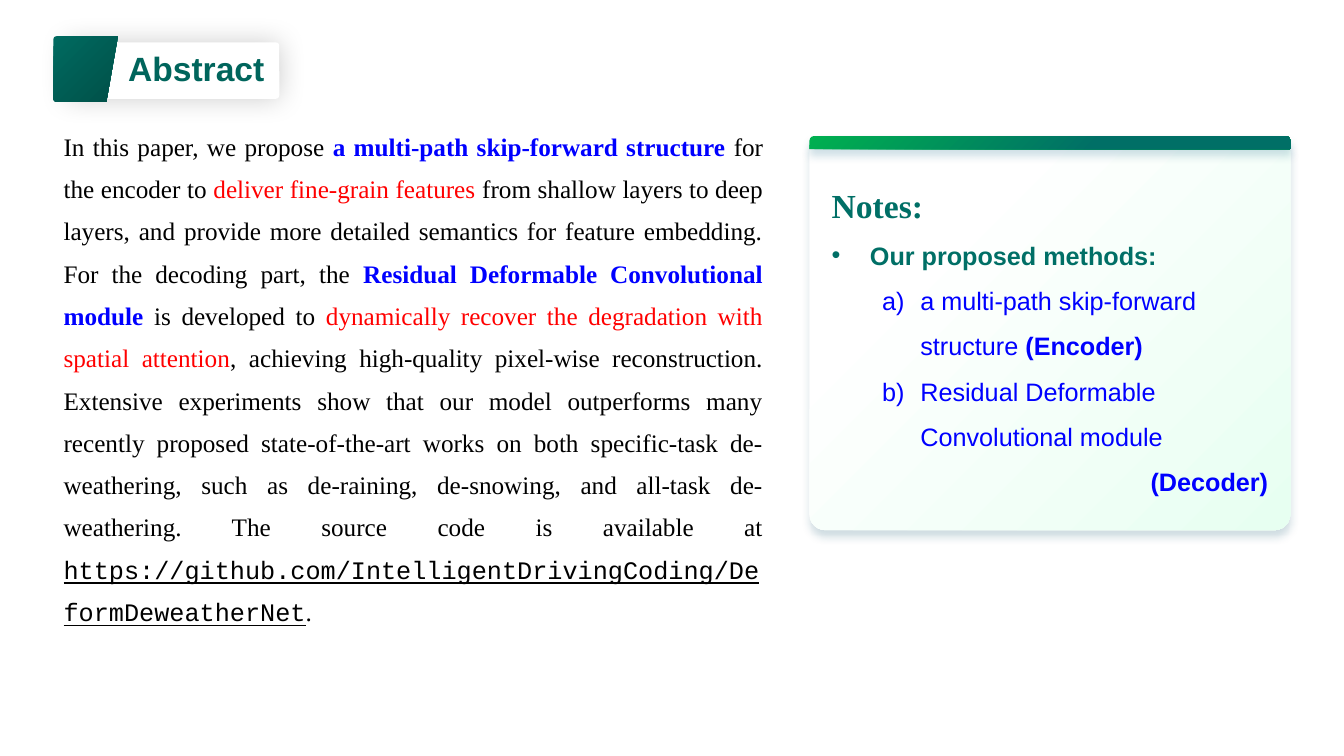
from dataclasses import dataclass, field
from math import cos, pi, sin
from typing import Any

from lxml.etree import SubElement
from pptx import Presentation
from pptx.dml.color import RGBColor as Rgb
from pptx.enum.shapes import MSO_SHAPE as Preset
from pptx.enum.text import MSO_ANCHOR as Anchor, MSO_AUTO_SIZE as AutoSize, PP_ALIGN as Align
from pptx.oxml.ns import qn
from pptx.util import Inches, Pt

WIDTH, HEIGHT = Inches(13.333), Inches(7.5)


@dataclass(frozen=True)
class Theme:
    black: str = "000000"
    white: str = "FFFFFF"
    blue: str = "0000FF"
    red: str = "FF0000"
    title: str = "00655C"
    teal: str = "006F66"
    sans: str = "Arial"
    serif: str = "Times New Roman"
    mono: str = "Courier New"
    heading: int = 24
    body: int = 18


THEME = Theme()


@dataclass(frozen=True)
class Area:
    """Left, top, width and height as percentages of the slide."""
    left: float
    top: float
    width: float
    height: float

    def box(self) -> tuple[int, ...]:
        return tuple(int(share * side / 100) for share, side in (
            (self.left, WIDTH), (self.top, HEIGHT), (self.width, WIDTH), (self.height, HEIGHT)))


@dataclass(frozen=True)
class Shadow:
    color: str
    blur: float
    distance: float = 0
    angle: int = 0
    opacity: int = 20


@dataclass(frozen=True)
class Card:
    area: Area
    preset: Preset
    corners: tuple[float, ...]
    stops: tuple[tuple[float, str], ...]
    shadow: Shadow


@dataclass(frozen=True)
class Span:
    text: str
    color: str = THEME.black
    bold: bool = False
    font: str = THEME.serif
    size: int = THEME.body
    underline: bool = False


@dataclass(frozen=True)
class Para:
    spans: list[Span]
    spacing: float = 1.0
    align: Align = Align.LEFT
    level: int = 0
    margin: float = 0
    hanging: float = 0
    bullet: tuple[str, dict[str, str]] = field(default=("a:buNone", {}))


# Content
LETTER = ("a:buAutoNum", {"type": "alphaLcParenR"})
DOT = ("a:buChar", {"char": "•"})


def note(text: str, bold: bool = False, color: str = THEME.blue) -> Span:
    return Span(text, color, bold, THEME.sans)


TITLE = [Para([Span("Abstract", THEME.title, True, THEME.sans, THEME.heading)])]
ABSTRACT = [Para([
    Span("In this paper, we propose "),
    Span("a multi-path skip-forward structure ", THEME.blue, True),
    Span("for the encoder to "),
    Span("deliver fine-grain features ", THEME.red),
    Span("from shallow layers to deep layers, and provide more detailed semantics for "
         "feature embedding. For the decoding part, the "),
    Span("Residual Deformable Convolutional module ", THEME.blue, True),
    Span("is developed to "),
    Span("dynamically recover the degradation with spatial attention", THEME.red),
    Span(", achieving high-quality pixel-wise reconstruction. Extensive experiments show that "
         "our model outperforms many recently proposed state-of-the-art works on both "
         "specific-task de-weathering, such as de-raining, de-snowing, and all-task "
         "de-weathering. The source code is available at "),
    Span("https://github.com/IntelligentDrivingCoding/DeformDeweatherNet",
         font=THEME.mono, underline=True),
    Span("."),
], 1.4, Align.JUSTIFY)]
NOTES = [
    Para([Span("Notes:", THEME.teal, True, size=THEME.heading)], 1.5, Align.JUSTIFY),
    Para([note("Our proposed methods:", True, THEME.teal)], 1.5, Align.JUSTIFY,
         0, 0.38, -0.38, DOT),
    Para([note("a multi-path skip-forward structure "), note("(Encoder)", True)], 1.5,
         Align.LEFT, 1, 0.88, -0.38, LETTER),
    Para([note("Residual Deformable Convolutional module")], 1.5,
         Align.LEFT, 1, 0.88, -0.38, LETTER),
    Para([note("(Decoder)", True)], 1.5, Align.RIGHT, 1, 0.5),
]
TEXTS = [
    (0, Area(8.78, 5.73, 12, 6.67), TITLE),
    (1, Area(3.98, 15.07, 53.55, 68.67), ABSTRACT),
    (2, Area(61.13, 21.07, 33.98, 45.07), NOTES),
]
TITLE_CARD = Card(Area(4.95, 5.6, 15.83, 7.47), Preset.ROUNDED_RECTANGLE, (0.06,),
                  ((0, THEME.white),), Shadow(THEME.black, 20))
NOTE_CARDS = [
    Card(Area(60.23, 18, 35.78, 52.13), Preset.ROUNDED_RECTANGLE, (0.04,),
         ((0.25, THEME.white), (1, "E7FFF1")), Shadow("0F526C", 6, 4, 90)),
    Card(Area(60.23, 18, 35.78, 1.73), Preset.ROUND_2_SAME_RECTANGLE, (0.35, 0),
         ((0, "00B050"), (0.6, THEME.teal)), Shadow("116584", 6, 4, 90)),
]
MARK_AREA = Area(3.98, 4.8, 4.8, 8.67)
MARK_STOPS = ((0, "006A60"), (1, "005048"))


def set_values(target: Any, values: dict[str, Any]) -> None:
    for name, value in values.items():
        setattr(target, name, value)


def paint(shape: Any, stops: tuple[tuple[float, str], ...]) -> None:
    shape.shadow.inherit = False
    shape.line.fill.background()
    if len(stops) == 1:
        shape.fill.solid()
        shape.fill.fore_color.rgb = Rgb.from_string(stops[0][1])
        return
    shape.fill.gradient()
    shape.fill.gradient_angle = 315
    for stop, (position, color) in zip(shape.fill.gradient_stops, stops):
        stop.position = position
        stop.color.rgb = Rgb.from_string(color)


def add_card(page: Any, card: Card) -> None:
    shape = page.shapes.add_shape(card.preset, *card.area.box())
    for index, corner in enumerate(card.corners):
        shape.adjustments[index] = corner
    paint(shape, card.stops)
    shadow = card.shadow
    outer = SubElement(shape.element.spPr.find(qn("a:effectLst")), qn("a:outerShdw"), {
        "blurRad": str(Pt(shadow.blur)), "dist": str(Pt(shadow.distance)),
        "dir": str(shadow.angle * 60000), "algn": "ctr", "rotWithShape": "0"})
    color = SubElement(outer, qn("a:srgbClr"), val=shadow.color)
    SubElement(color, qn("a:alpha"), val=str(shadow.opacity * 1000))


def add_mark(page: Any) -> None:
    """Slanted block with rounded corners on its left side."""
    left, top, width, height = MARK_AREA.box()
    radius, steps = Inches(0.03), 6
    points = [(left + width, top), (left + width * 0.82, top + height)]
    for center, start in ((top + height - radius, pi / 2), (top + radius, pi)):
        for step in range(steps + 1):
            angle = start + step / steps * pi / 2
            points.append((left + radius + radius * cos(angle), center + radius * sin(angle)))
    builder = page.shapes.build_freeform(left + radius, top)
    builder.add_line_segments([(round(x), round(y)) for x, y in points], close=True)
    paint(builder.convert_to_shape(), MARK_STOPS)


def write_para(para: Any, content: Para) -> None:
    properties = para._p.get_or_add_pPr()
    properties.set("marL", str(Inches(content.margin)))
    properties.set("indent", str(Inches(content.hanging)))
    tag, attributes = content.bullet
    SubElement(properties, qn(tag), attributes)
    set_values(para, {"alignment": content.align, "level": content.level,
                      "line_spacing": content.spacing, "space_before": Pt(0)})
    for part in content.spans:
        span = para.add_run()
        span.text = part.text
        set_values(span.font, {"name": part.font, "size": Pt(part.size),
                               "bold": part.bold, "underline": part.underline})
        span.font.color.rgb = Rgb.from_string(part.color)


def fill_placeholder(page: Any, index: int, area: Area, paras: list[Para]) -> None:
    box = page.placeholders[index]
    set_values(box, dict(zip(("left", "top", "width", "height"), area.box())))
    frame = box.text_frame
    set_values(frame, {"word_wrap": True, "vertical_anchor": Anchor.TOP,
                       "auto_size": AutoSize.SHAPE_TO_FIT_TEXT})
    for number, content in enumerate(paras):
        write_para(frame.add_paragraph() if number else frame.paragraphs[0], content)
    # Bring the text in front of the cards
    box.element.getparent().append(box.element)


def main() -> None:
    deck = Presentation()
    set_values(deck, {"slide_width": WIDTH, "slide_height": HEIGHT})
    page = deck.slides.add_slide(deck.slide_layouts[3])
    # Title badge and notes panel
    add_card(page, TITLE_CARD)
    add_mark(page)
    for card in NOTE_CARDS:
        add_card(page, card)
    # Title, abstract and notes
    for index, area, paras in TEXTS:
        fill_placeholder(page, index, area, paras)
    deck.save("out.pptx")


if __name__ == "__main__":
    main()
